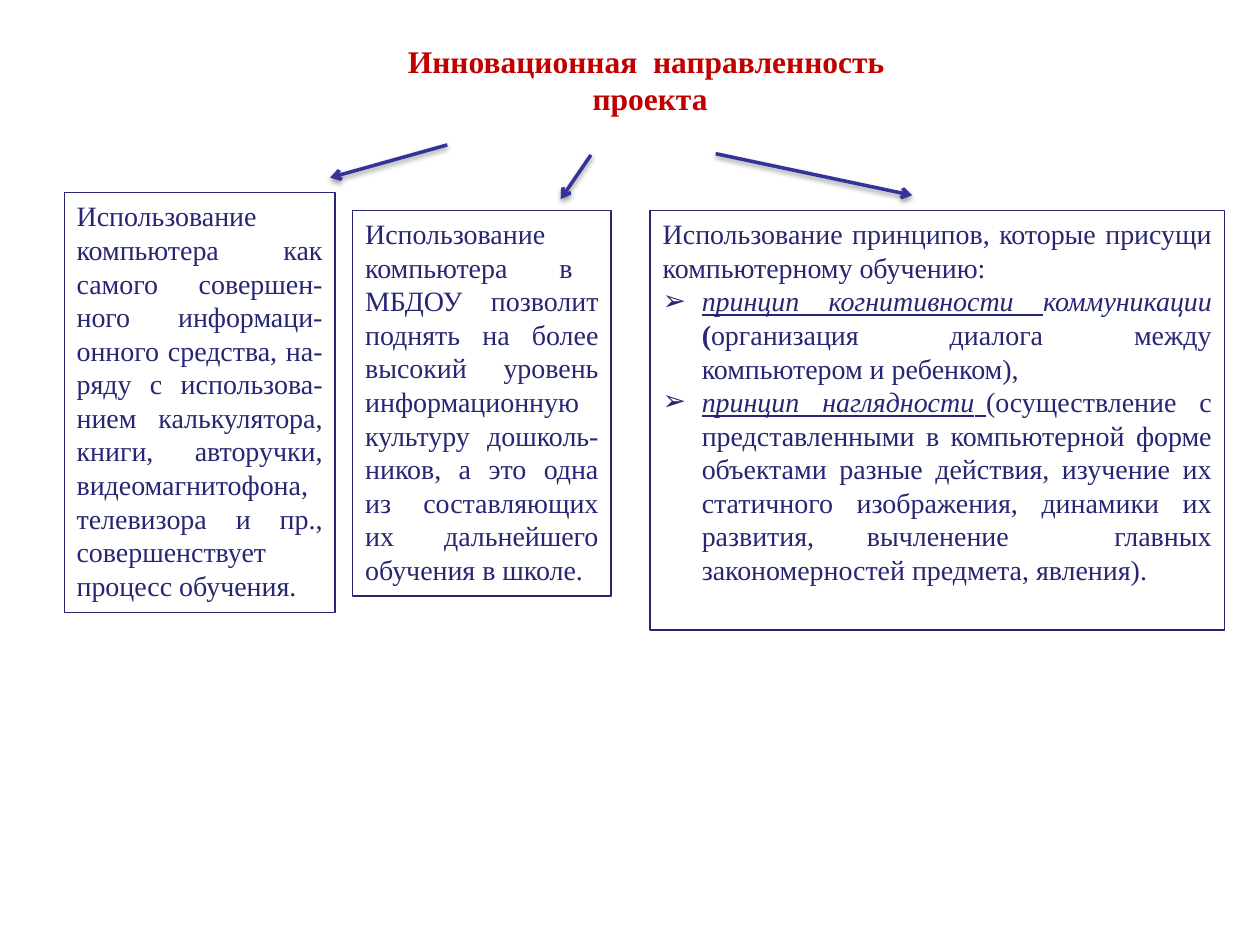
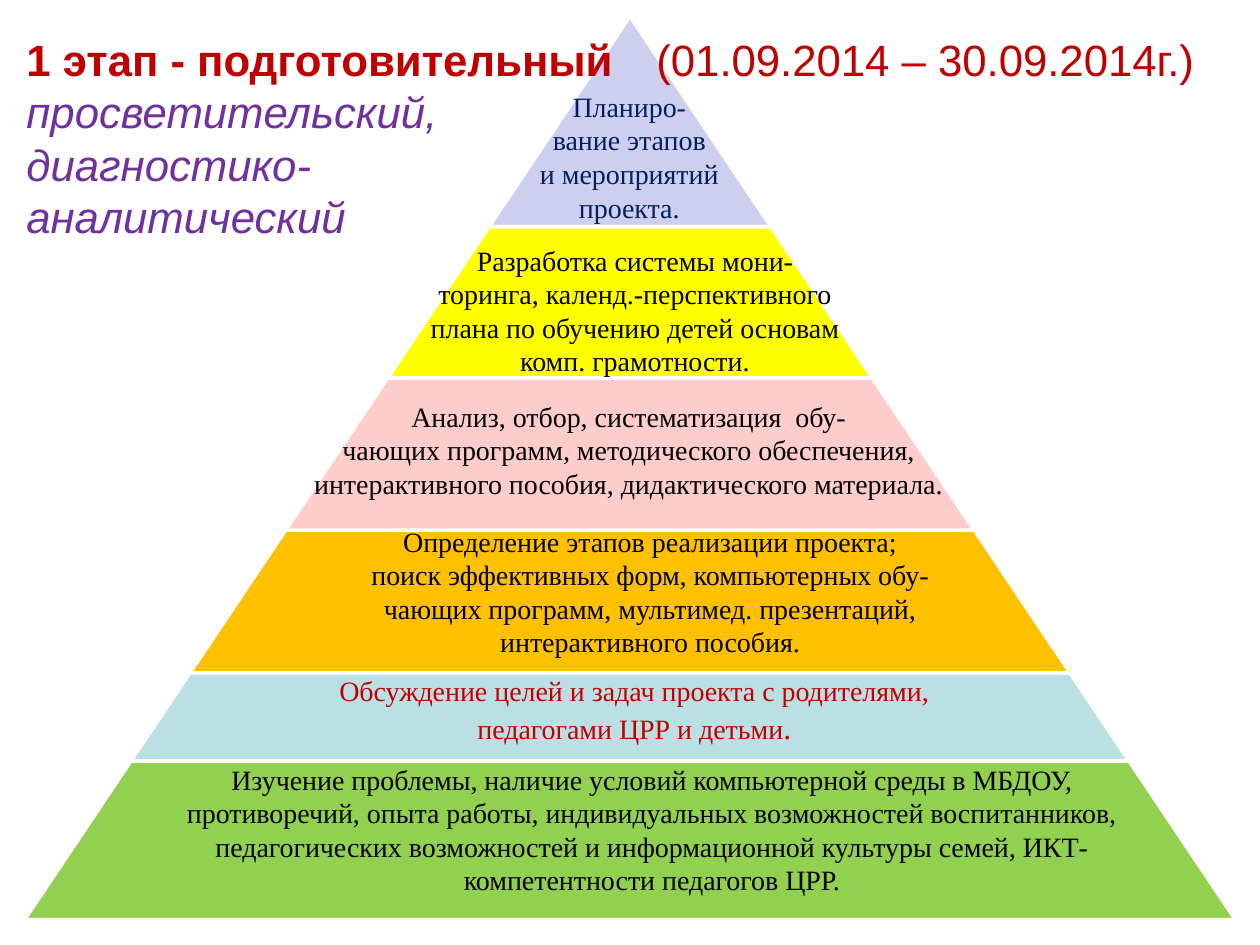
from dataclasses import dataclass

from lxml import etree
from pptx import Presentation, util as u
from pptx.dml.color import RGBColor
from pptx.enum import shapes, text
from pptx.oxml import parse_xml
from pptx.oxml.ns import nsdecls, qn

LEFT, CENTER, JUSTIFY = (text.PP_ALIGN.LEFT, text.PP_ALIGN.CENTER,
                         text.PP_ALIGN.JUSTIFY)


@dataclass(frozen=True)
class Theme:
    serif: str = "Times New Roman"
    sans: str = "Arial"
    body_size: int = 16
    title_size: int = 18
    stage_size: int = 25
    red: str = "C00000"
    purple: str = "7030A0"
    ink: str = "262673"
    navy: str = "002060"
    black: str = "000000"
    white: str = "FFFFFF"
    arrow: str = "333399"
    levels: tuple = ("CECEEF", "FFFF00", "FFCCCC", "FFC000", "BBE0E3", "92D050")


T = Theme()

SHADOW = f"""<a:effectLst {nsdecls('a')}>
  <a:outerShdw blurRad="{u.Pt(3.1)}" dist="{u.Pt(1.6)}" dir="5400000" rotWithShape="0">
    <a:srgbClr val="000000"><a:alpha val="38000"/></a:srgbClr>
  </a:outerShdw></a:effectLst>"""


def rgb(value):
    return RGBColor.from_string(value)


class Deck:
    def __init__(self, theme):
        self.theme = theme
        self.prs = Presentation()
        self.prs.slide_width, self.prs.slide_height = u.Inches(10), u.Inches(7.5)
        self.s = None

    def slide(self, layout):
        self.s = self.prs.slides.add_slide(self.prs.slide_layouts[layout])

    def outline(self, sp, color, width):
        sp.line.color.rgb, sp.line.width = rgb(color), u.Pt(width)

    def place(self, sp, at):
        for name, value in zip(("left", "top", "width", "height"), at):
            setattr(sp, name, u.Inches(value))

    def set_text(self, sp, paragraphs, align, tab=None, bullets_from=None, **base):
        """Fill a shape; a paragraph is a string or a list of (text, format) runs."""
        tf = sp.text_frame
        frame = dict(word_wrap=True, auto_size=text.MSO_AUTO_SIZE.NONE,
                     vertical_anchor=text.MSO_ANCHOR.TOP)
        for name, value in frame.items():
            setattr(tf, name, value)
        for i, runs in enumerate(paragraphs):
            p = tf.paragraphs[0] if i == 0 else tf.add_paragraph()
            bulleted = bullets_from is not None and i >= bullets_from
            self.indent(p, bulleted, tab)
            p.alignment, p.space_before = align, u.Pt(0)
            for words, fmt in [(runs, {})] if isinstance(runs, str) else runs:
                self.run(p, words, {**base, **fmt})

    def indent(self, p, bulleted, tab):
        pPr = p._p.get_or_add_pPr()
        hang = u.Inches(0.31) if bulleted else 0
        pPr.set("marL", str(hang))
        pPr.set("indent", str(-hang))
        if bulleted:
            etree.SubElement(pPr, qn("a:buChar")).set("char", "➢")
        else:
            etree.SubElement(pPr, qn("a:buNone"))
        if tab:
            stops = etree.SubElement(pPr, qn("a:tabLst"))
            etree.SubElement(stops, qn("a:tab"), pos=str(u.Inches(tab)), algn="l")

    def run(self, p, words, fmt):
        r = p.add_run()
        r.text = words
        values = dict(name=self.theme.serif, size=self.theme.body_size,
                      color=self.theme.black, bold=False, italic=False,
                      underline=False)
        values.update(fmt)
        r.font.color.rgb = rgb(values.pop("color"))
        values["size"] = u.Pt(values["size"])
        for name, value in values.items():
            setattr(r.font, name, value)

    def title(self, at, paragraphs, align, **fmt):
        sp = self.s.shapes.title
        sp._element.getparent().append(sp._element)  # keep above shapes drawn so far
        self.place(sp, at)
        self.set_text(sp, paragraphs, align, color=self.theme.red, **fmt)

    def box(self, at, paragraphs):
        sp = self.shape(shapes.MSO_SHAPE.RECTANGLE, at)
        self.frame(sp, paragraphs)

    def list_box(self, at, paragraphs):
        sp = self.s.placeholders[1]
        self.place(sp, at)
        self.frame(sp, paragraphs, bullets_from=1)

    def frame(self, sp, paragraphs, **options):
        self.outline(sp, self.theme.ink, 0.75)
        self.set_text(sp, paragraphs, JUSTIFY, color=self.theme.ink, **options)

    def shape(self, kind, at, fill=None):
        sp = self.s.shapes.add_shape(kind, *map(u.Inches, at))
        sp.shadow.inherit = False
        if fill:
            sp.fill.solid()
            sp.fill.fore_color.rgb = rgb(fill)
        else:
            sp.fill.background()
        return sp

    def label(self, at, paragraphs, **fmt):
        sp = self.s.shapes.add_textbox(*map(u.Inches, at))
        self.set_text(sp, paragraphs, CENTER, **fmt)

    def arrow(self, start, end):
        sp = self.s.shapes.add_connector(
            shapes.MSO_CONNECTOR.STRAIGHT, *map(u.Inches, start + end))
        self.outline(sp, self.theme.arrow, 2)
        etree.SubElement(sp.line._get_or_add_ln(), qn("a:tailEnd"), type="arrow")
        sp._element.spPr.append(parse_xml(SHADOW))

    def pyramid(self, center, edges, base):
        """Stack trapezoids between the given heights so that their sides align."""
        slope = base / (edges[-1] - edges[0])
        for top, bottom, fill in zip(edges, edges[1:], self.theme.levels):
            width = slope * (bottom - edges[0])
            at = (center - width / 2, top, width, bottom - top)
            sp = self.shape(shapes.MSO_SHAPE.TRAPEZOID, at, fill)
            sp.adjustments[0] = slope / 2
            self.outline(sp, self.theme.white, 2)


def innovation_slide(deck):
    deck.slide(1)
    deck.title((2.66, 0.28, 5, 0.71), ["Инновационная  направленность  проекта"],
               CENTER, size=T.title_size, bold=True)
    deck.box((0.51, 1.53, 2.15, 3.33), [
        "Использование компьютера как самого совершен-ного информаци-онного "
        "средства, на-ряду с использова-нием калькулятора, книги, авторучки, "
        "видеомагнитофона, телевизора и пр., совершенствует процесс обучения."])
    deck.box((2.8, 1.67, 2.05, 3.06), [
        "Использование  компьютера  в  МБДОУ позволит поднять на более высокий  "
        "уровень информационную культуру дошколь-ников, а это одна из "
        "составляющих их дальнейшего обучения в школе."])
    principle = dict(italic=True, underline=True)
    deck.list_box((5.16, 1.67, 4.56, 3.33), [
        "Использование принципов, которые присущи компьютерному обучению:",
        [("принцип когнитивности ", principle),
         ("коммуникации", dict(italic=True)),
         (" (", dict(bold=True)),
         ("организация  диалога  между компьютером и ребенком),", {})],
        [("принцип  наглядности", principle),
         (" ", dict(underline=True)),
         ("(осуществление  с представленными в компьютерной форме объектами "
          "разные действия, изучение их статичного изображения, динамики их "
          "развития, вычленение  главных закономерностей предмета, явления).", {})]])
    for start, end in (((3.55, 1.15), (2.62, 1.41)),
                       ((4.69, 1.23), (4.45, 1.58)),
                       ((5.68, 1.22), (7.24, 1.55))):
        deck.arrow(start, end)


def stage_slide(deck):
    deck.slide(5)
    deck.pyramid(5, (0.13, 1.8, 3, 4.21, 5.34, 6.04, 7.3), 9.61)
    kind = dict(color=T.purple, italic=True)
    deck.title((0.11, 0.21, 9.77, 1.78), [
        [("1 этап - подготовительный\t", dict(bold=True)),
         ("(01.09.2014 – 30.09.2014г.) ", {}),
         ("просветительский,", kind)],
        [("диагностико-", kind)],
        [("аналитический", kind)]],
        LEFT, tab=5.04, name=T.sans, size=T.stage_size)
    deck.label((1.1, 6, 8.15, 1.48), [
        "Изучение проблемы, наличие условий компьютерной среды в МБДОУ, "
        "противоречий, опыта работы, индивидуальных возможностей воспитанников, "
        "педагогических возможностей и информационной культуры семей, "
        "ИКТ-компетентности педагогов ЦРР."])
    deck.label((1.53, 5.3, 7.01, 0.67), [
        "Обсуждение целей и задач проекта с родителями,",
        [("педагогами ЦРР и детьми", {}), (".", dict(size=T.title_size))]],
        color=T.red)
    deck.label((2.09, 4.11, 6.14, 1.48), [
        "Определение этапов реализации проекта;",
        "поиск эффективных форм, компьютерных обу-",
        "чающих программ, мультимед. презентаций,",
        "интерактивного пособия."])
    deck.label((2.31, 3.12, 5.36, 1.21), [
        "Анализ, отбор, систематизация  обу-",
        "чающих программ, методического обеспечения, интерактивного пособия, "
        "дидактического материала."])
    deck.label((3.23, 1.88, 3.62, 1.51), [
        "Разработка системы мони-",
        "торинга, календ.-перспективного плана по обучению детей основам "
        "комп. грамотности."])
    deck.label((3.93, 0.66, 2.13, 1.48), [
        "Планиро-", "вание этапов", "и мероприятий проекта."], color=T.navy)


def main():
    deck = Deck(T)
    innovation_slide(deck)
    stage_slide(deck)
    deck.prs.save("out.pptx")


if __name__ == "__main__":
    main()
